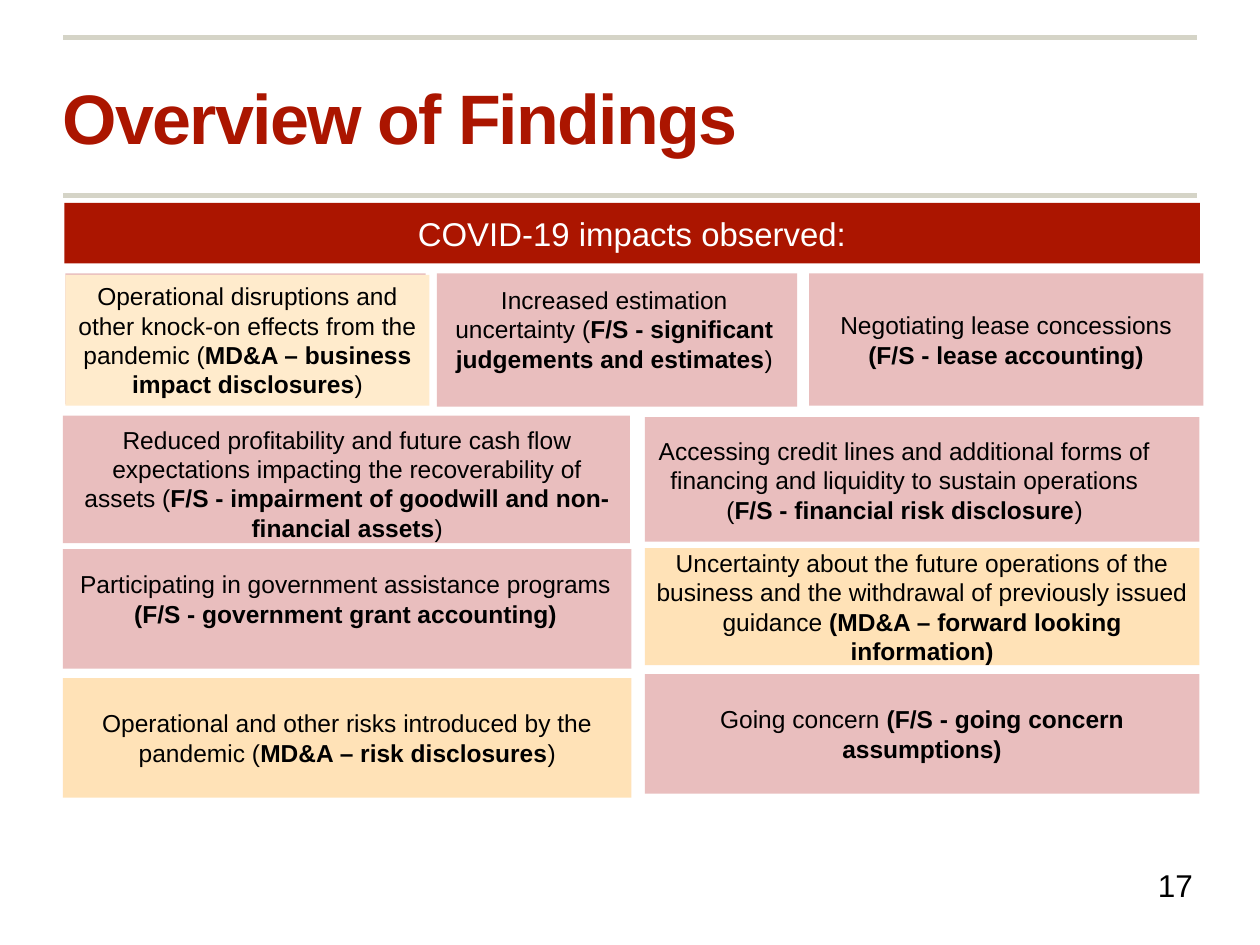
from typing import NamedTuple

from lxml import etree
from pptx import Presentation, util as u
from pptx.dml.color import RGBColor
from pptx.enum import shapes, text
from pptx.oxml.ns import qn

RED = RGBColor(0xAB, 0x15, 0x00)
ROSE = RGBColor(0xE0, 0xA3, 0xA3)
AMBER = RGBColor(0xFF, 0xD6, 0x99)
CREAM = RGBColor(0xFF, 0xEB, 0xCC)
RULE_GREY = RGBColor(0xD5, 0xD4, 0xC7)
BLACK = RGBColor(0, 0, 0)
WHITE = RGBColor(0xFF, 0xFF, 0xFF)
FONT = "Arial"
MIDDLE, TOP = text.MSO_ANCHOR.MIDDLE, text.MSO_ANCHOR.TOP
CENTER, LEFT = text.PP_ALIGN.CENTER, text.PP_ALIGN.LEFT


class Box(NamedTuple):
    """Left, top, width and height in centimetres."""
    left: float
    top: float
    width: float
    height: float

    def lengths(self) -> list[u.Length]:
        return [u.Cm(value) for value in self]


class Finding(NamedTuple):
    """One impact; label_box is set where the wording sits in its own text box."""
    panel: Box
    color: RGBColor
    lead: str
    disclosure: str
    tail: str = ""
    label_box: Box | None = None
    anchor: text.MSO_ANCHOR = MIDDLE
    margins: tuple[float, float] = (0.18, 0.1)
    opacity: int = 70


OWN_BOX = {"anchor": TOP, "margins": (0.25, 0.13)}
LEFT_X, RIGHT_X = 1.27, 13.0
LEFT_W, RIGHT_W = 11.46, 11.18

FINDINGS = [
    # Top row of three
    Finding(Box(1.32, 5.54, 7.34, 2.64), CREAM,
            "Operational disruptions and other knock-on effects from the pandemic (",
            "MD&A – business impact disclosures", ")", opacity=100, **OWN_BOX),
    Finding(Box(8.81, 5.51, 7.26, 2.69), ROSE,
            "Increased estimation uncertainty (",
            "F/S - significant judgements and estimates", ")",
            Box(8.74, 5.61, 7.29, 2.06), **OWN_BOX),
    Finding(Box(16.31, 5.51, 7.95, 2.67), ROSE,
            "Negotiating lease concessions ", "(F/S - lease accounting)"),
    # Left column
    Finding(Box(LEFT_X, 8.38, 11.43, 2.57), ROSE,
            "Reduced profitability and future cash flow expectations "
            "impacting the recoverability of assets (",
            "F/S - impairment of goodwill and non-financial assets", ")",
            Box(1.3, 8.43, 11.4, 2.64), **OWN_BOX),
    Finding(Box(LEFT_X, 11.07, LEFT_W, 2.41), ROSE,
            "Participating in government assistance programs ",
            "(F/S - government grant accounting)",
            label_box=Box(LEFT_X, 11.35, 11.4, 1.45), **OWN_BOX),
    Finding(Box(LEFT_X, 13.67, LEFT_W, 2.41), AMBER,
            "Operational and other risks introduced by the pandemic (",
            "MD&A – risk disclosures", ")"),
    # Right column
    Finding(Box(RIGHT_X, 8.41, RIGHT_W, 2.51), ROSE,
            "Accessing credit lines and additional forms of financing "
            "and liquidity to sustain operations (",
            "F/S - financial risk disclosure", ")",
            Box(12.85, 8.66, 10.77, 2.06), **OWN_BOX),
    Finding(Box(RIGHT_X, 11.05, RIGHT_W, 2.36), AMBER,
            "Uncertainty about the future operations of the business "
            "and the withdrawal of previously issued guidance ",
            "(MD&A – forward looking information)"),
    Finding(Box(RIGHT_X, 13.59, RIGHT_W, 2.41), ROSE,
            "Going concern ", "(F/S - going concern assumptions)"),
]


def add_panel(slide, box: Box, color: RGBColor, opacity: int = 100):
    shape = slide.shapes.add_shape(shapes.MSO_SHAPE.RECTANGLE, *box.lengths())
    shape.shadow.inherit = False
    shape.fill.solid()
    shape.fill.fore_color.rgb = color
    shape.line.fill.background()
    if opacity < 100:
        color_element = shape.fill._xPr.find(qn("a:solidFill"))[0]
        etree.SubElement(color_element, qn("a:alpha"), val=str(opacity * 1000))
    return shape


def write(shape, parts: list[tuple[str, bool]], size: float, color: RGBColor,
          align=CENTER, anchor=MIDDLE, margins=(0.18, 0.1), wrap: bool = True):
    frame = shape.text_frame
    frame.word_wrap = wrap
    frame.vertical_anchor = anchor
    frame.margin_left = frame.margin_right = u.Cm(margins[0])
    frame.margin_top = frame.margin_bottom = u.Cm(margins[1])
    paragraph = frame.paragraphs[0]
    paragraph.alignment = align
    paragraph.font.name = FONT
    paragraph.font.size = u.Pt(size)
    paragraph.font.color.rgb = color
    for words, bold in parts:
        run = paragraph.add_run()
        run.text = words
        run.font.bold = bold
    return paragraph


def add_rule(slide, top: float) -> None:
    rule = slide.shapes.add_connector(shapes.MSO_CONNECTOR.STRAIGHT, u.Cm(1.27),
                                      u.Cm(top), u.Cm(24.13), u.Cm(top))
    rule.line.color.rgb = RULE_GREY
    rule.line.width = u.Pt(3)
    etree.SubElement(rule._element.spPr, qn("a:effectLst"))


def add_finding(slide, finding: Finding) -> None:
    shape = add_panel(slide, finding.panel, finding.color, finding.opacity)
    if finding.label_box:
        shape = slide.shapes.add_textbox(*finding.label_box.lengths())
    parts = [(finding.lead, False), (finding.disclosure, True)]
    if finding.tail:
        parts.append((finding.tail, False))
    write(shape, parts, 14, BLACK, anchor=finding.anchor, margins=finding.margins)


def main() -> None:
    presentation = Presentation()
    presentation.slide_width, presentation.slide_height = u.Cm(25.4), u.Cm(19.05)
    slide = presentation.slides.add_slide(presentation.slide_layouts[6])

    # Title between two rules
    for top in (0.76, 3.94):
        add_rule(slide, top)
    title = slide.shapes.add_textbox(*Box(1.27, 0.76, 22.86, 3.18).lengths())
    paragraph = write(title, [("Overview of Findings", True)], 40, RED,
                      align=LEFT, margins=(0, 0))
    paragraph.runs[0]._r.get_or_add_rPr().set("spc", "-100")

    # Heading band
    band = add_panel(slide, Box(1.3, 4.09, 22.89, 1.22), RED)
    write(band, [("COVID-19 impacts observed:", False)], 18.8, WHITE)

    # Findings; the first one lies on a rose backing panel
    add_panel(slide, Box(1.32, 5.51, 7.26, 2.64), ROSE, 70)
    for finding in FINDINGS:
        add_finding(slide, finding)

    # Page number
    number = slide.shapes.add_textbox(*Box(23.09, 17.32, 1.3, 1.02).lengths())
    write(number, [("17", False)], 18, BLACK, align=LEFT, wrap=False, **OWN_BOX)

    presentation.save("out.pptx")


if __name__ == "__main__":
    main()
